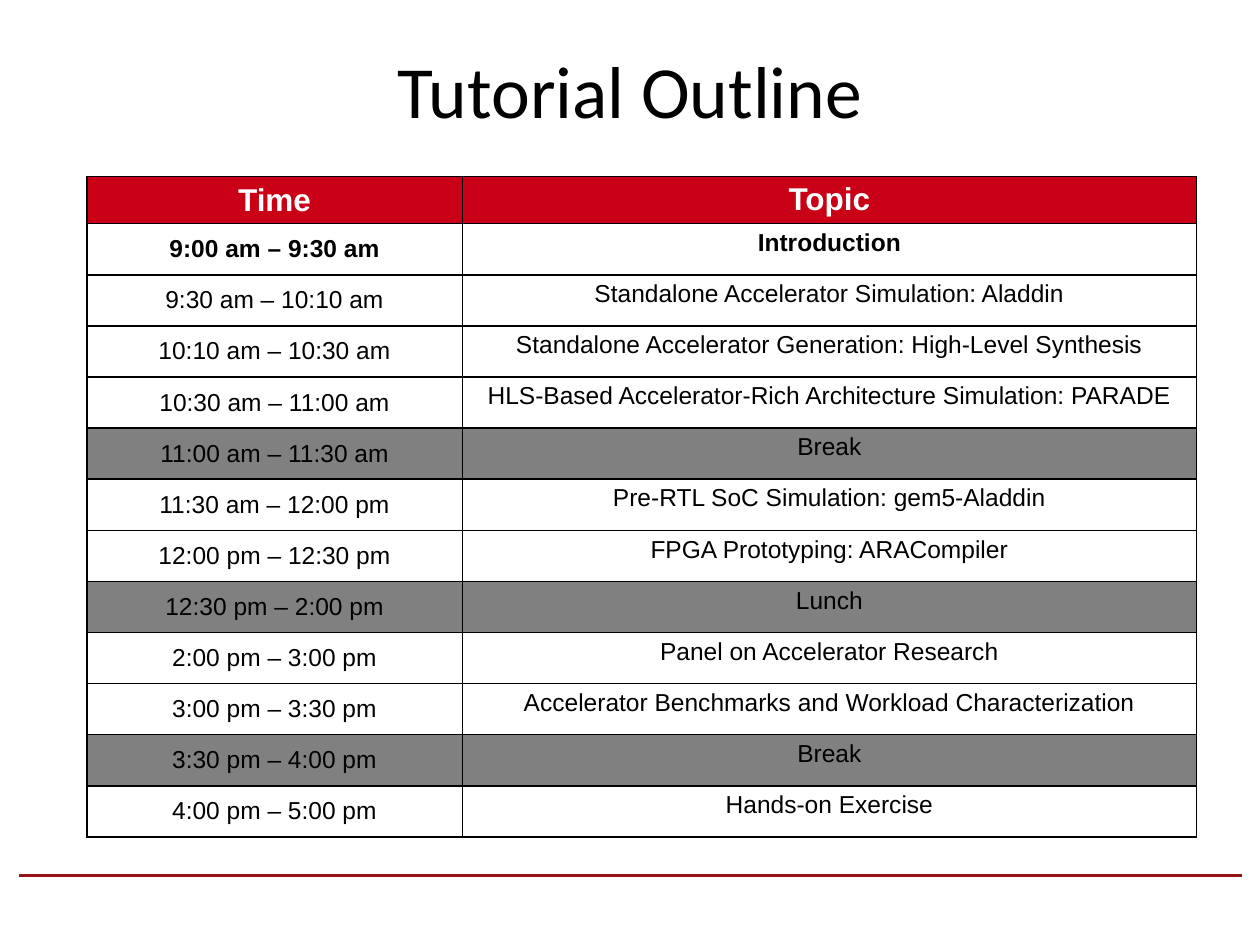
from pptx import Presentation
from pptx.dml.color import RGBColor
from pptx.enum.shapes import MSO_CONNECTOR
from pptx.enum.text import MSO_ANCHOR, PP_ALIGN
from pptx.oxml import parse_xml
from pptx.oxml.ns import nsdecls
from pptx.util import Cm, Pt

BLACK = RGBColor(0x00, 0x00, 0x00)
WHITE = RGBColor(0xFF, 0xFF, 0xFF)
HEADER_RED = RGBColor(0xC9, 0x00, 0x16)
RULE_RED = RGBColor(0x97, 0x12, 0x17)
PAUSE_GRAY = RGBColor(0x80, 0x80, 0x80)

SCHEDULE = [
    ("Time", "Topic"),
    ("9:00 am – 9:30 am", "Introduction"),
    ("9:30 am – 10:10 am", "Standalone Accelerator Simulation: Aladdin"),
    ("10:10 am – 10:30 am", "Standalone Accelerator Generation: High-Level Synthesis"),
    ("10:30 am – 11:00 am", "HLS-Based Accelerator-Rich Architecture Simulation: PARADE"),
    ("11:00 am – 11:30 am", "Break"),
    ("11:30 am – 12:00 pm", "Pre-RTL SoC Simulation: gem5-Aladdin"),
    ("12:00 pm – 12:30 pm", "FPGA Prototyping: ARACompiler"),
    ("12:30 pm – 2:00 pm", "Lunch"),
    ("2:00 pm – 3:00 pm", "Panel on Accelerator Research"),
    ("3:00 pm – 3:30 pm", "Accelerator Benchmarks and Workload Characterization"),
    ("3:30 pm – 4:00 pm", "Break"),
    ("4:00 pm – 5:00 pm", "Hands-on Exercise"),
]
CURRENT_ROW = 1
HEADER_HEIGHT, ROW_HEIGHT = Cm(0.95), Cm(1.03)
COLUMN_WIDTHS = [Cm(7.57), Cm(14.8)]


def add_borders(cell):
    properties = cell._tc.get_or_add_tcPr()
    for position, side in enumerate("LRTB"):
        properties.insert(position, parse_xml(
            f'<a:ln{side} {nsdecls("a")} w="{Pt(1)}"><a:solidFill>'
            f'<a:srgbClr val="{BLACK}"/></a:solidFill></a:ln{side}>'))


prs = Presentation()
prs.slide_width, prs.slide_height = Cm(25.4), Cm(19.05)
slide = prs.slides.add_slide(prs.slide_layouts[5])

# Rule along the foot of the slide
foot_rule = slide.shapes.add_connector(
    MSO_CONNECTOR.STRAIGHT, Cm(0.38), Cm(17.65), Cm(25.04), Cm(17.65))
foot_rule.line.color.rgb = RULE_RED
foot_rule.line.width = Pt(2)
foot_rule._element.spPr.append(parse_xml(f'<a:effectLst {nsdecls("a")}/>'))

# Title
title = slide.shapes.title
title.left, title.top, title.width, title.height = Cm(1.27), Cm(0.2), Cm(22.86), Cm(3.18)
title.text_frame.text = "Tutorial Outline"
title.text_frame.vertical_anchor = MSO_ANCHOR.MIDDLE
heading = title.text_frame.paragraphs[0]
heading.alignment = PP_ALIGN.CENTER
heading.font.name = "Calibri"
heading.font.size = Pt(42)
heading.font.color.rgb = BLACK

# Schedule
schedule = slide.shapes.add_table(
    len(SCHEDULE), 2, Cm(1.75), Cm(3.56), sum(COLUMN_WIDTHS),
    HEADER_HEIGHT + ROW_HEIGHT * (len(SCHEDULE) - 1)).table
schedule.first_row = schedule.horz_banding = False
for column, width in zip(schedule.columns, COLUMN_WIDTHS):
    column.width = width

for row, entry in enumerate(SCHEDULE):
    is_header = row == 0
    schedule.rows[row].height = HEADER_HEIGHT if is_header else ROW_HEIGHT
    for col, text in enumerate(entry):
        cell = schedule.cell(row, col)
        cell.text = text
        cell.margin_top = cell.margin_bottom = Cm(0.11)
        cell.vertical_anchor = MSO_ANCHOR.MIDDLE if col == 0 else MSO_ANCHOR.TOP
        if is_header:
            cell.fill.solid()
            cell.fill.fore_color.rgb = HEADER_RED
        elif entry[1] in ("Break", "Lunch"):
            cell.fill.solid()
            cell.fill.fore_color.rgb = PAUSE_GRAY
        else:
            cell.fill.background()
        add_borders(cell)
        paragraph = cell.text_frame.paragraphs[0]
        paragraph.alignment = PP_ALIGN.CENTER
        paragraph.font.name = "Arial"
        paragraph.font.size = Pt(18 if is_header else 14)
        paragraph.font.bold = row <= CURRENT_ROW
        paragraph.font.color.rgb = WHITE if is_header else BLACK

prs.save("out.pptx")
